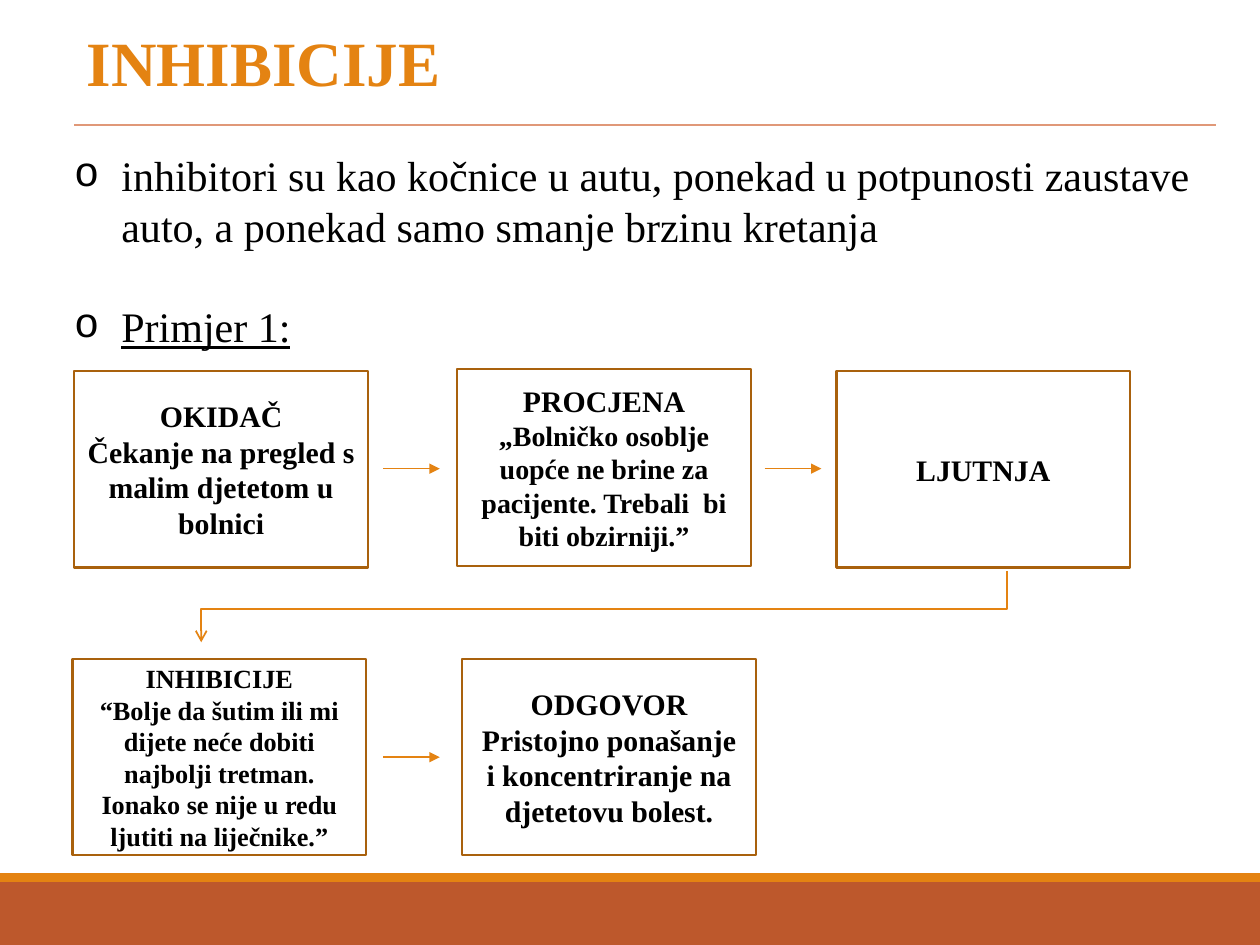
from pptx import Presentation
from pptx.dml.color import RGBColor
from pptx.enum.shapes import MSO_CONNECTOR as Link, MSO_SHAPE as Form
from pptx.enum.text import MSO_ANCHOR as Anchor, PP_ALIGN as Align
from pptx.oxml.ns import qn
from pptx.util import Pt
from lxml.etree import SubElement
from dataclasses import dataclass


@dataclass(frozen=True)
class Theme:
    face: str = "Times New Roman"
    ink: str = "000000"
    gold: str = "E48312"
    rust: str = "BD582C"
    rule: str = "E09878"
    edge: str = "A9610D"
    head: int = 36
    body: int = 24
    step: int = 17


theme = Theme()


def style(par, size, color=theme.ink, bold=False):
    font = par.font
    font.name, font.size, font.bold = theme.face, Pt(size), bold
    font.color.rgb = RGBColor.from_string(color)


def stroke(shape, color, width=1, tip=None):
    """Colour the outline and, if tip is given, end it with an arrowhead."""
    shape.line.color.rgb = RGBColor.from_string(color)
    shape.line.width = Pt(width)
    if tip:
        SubElement(shape.line._get_or_add_ln(), qn("a:tailEnd"), type=tip)


deck = Presentation()
deck.slide_width, deck.slide_height = Pt(720), Pt(540)
slide = deck.slides.add_slide(deck.slide_layouts[5])
shapes = slide.shapes

# Footer bands
for top, high, color in [(504, 36, theme.rust), (499, 5, theme.gold)]:
    band = shapes.add_shape(Form.RECTANGLE, 0, Pt(top), Pt(720), Pt(high))
    band.shadow.inherit = False
    band.fill.solid()
    band.fill.fore_color.rgb = RGBColor.from_string(color)
    band.line.fill.background()

# Title
title = shapes.title
title.left, title.top, title.width, title.height = Pt(42.5), Pt(9.4), Pt(677.5), Pt(51)
title.text_frame.text = "INHIBICIJE"
title.text_frame.vertical_anchor = Anchor.MIDDLE
par = title.text_frame.paragraphs[0]
par.alignment = Align.LEFT
style(par, theme.head, theme.gold, True)

# Bullets
box = shapes.add_textbox(Pt(35.3), Pt(82), Pt(659.5), Pt(174))
frame = box.text_frame
frame.word_wrap = True
points = [
    "inhibitori su kao kočnice u autu, ponekad u potpunosti zaustave auto, "
    "a ponekad samo smanje brzinu kretanja",
    "Primjer 1:",
]
for i, text in enumerate(points):
    par = frame.paragraphs[0] if i == 0 else frame.add_paragraph()
    par.text = text
    props = par._p.get_or_add_pPr()
    props.set("marL", str(Pt(27)))
    props.set("indent", str(-Pt(27)))
    SubElement(props, qn("a:buFont"), typeface="Courier New")
    SubElement(props, qn("a:buChar"), char="o")
    style(par, theme.body)
    if i:
        par.space_before = Pt(28.8)
        par.font.underline = True

# Steps: left, top, heading, text, heading size, text size
steps = [
    (42.5, 212, "OKIDAČ", "Čekanje na pregled s malim djetetom u bolnici",
     theme.step, theme.step),
    (261.3, 211, "PROCJENA",
     "„Bolničko osoblje uopće ne brine za pacijente. Trebali  bi biti obzirniji.”",
     theme.step, 16),
    (478, 212, "LJUTNJA", None, theme.step, theme.step),
    (41.5, 376.5, "INHIBICIJE",
     "“Bolje da šutim ili mi dijete neće dobiti najbolji tretman. "
     "Ionako se nije u redu ljutiti na liječnike.”", 15, 15),
    (264.2, 376.5, "ODGOVOR",
     "Pristojno ponašanje i koncentriranje na djetetovu bolest.",
     theme.step, theme.step),
]
for left, top, name, text, big, small in steps:
    step = shapes.add_shape(Form.RECTANGLE, Pt(left), Pt(top), Pt(167.8), Pt(112.3))
    step.shadow.inherit = False
    step.fill.background()
    stroke(step, theme.edge, 1.25)
    frame = step.text_frame
    frame.word_wrap = True
    frame.vertical_anchor = Anchor.MIDDLE
    frame.text = f"{name}\n{text}" if text else name
    for par, size in zip(frame.paragraphs, (big, small)):
        par.alignment = Align.CENTER
        style(par, size, bold=True)

# Title rule and straight arrows
lines = [
    (42.5, 71.3, 652.3, theme.rule, None),
    (218.9, 267.8, 32.4, theme.gold, "triangle"),
    (437, 267.8, 32.4, theme.gold, "triangle"),
    (218.9, 432.7, 32.4, theme.gold, "triangle"),
]
for left, top, wide, color, tip in lines:
    line = shapes.add_connector(
        Link.STRAIGHT, Pt(left), Pt(top), Pt(left + wide), Pt(top))
    stroke(line, color, tip=tip)
    SubElement(line._element.spPr, qn("a:effectLst"))

# Bent arrow down to the second row
pen = shapes.build_freeform(Pt(575.3), Pt(326.2))
pen.add_line_segments(
    [(Pt(575.3), Pt(348)), (Pt(115), Pt(348)), (Pt(115), Pt(367))], close=False)
bend = pen.convert_to_shape()
bend.shadow.inherit = False
bend.fill.background()
stroke(bend, theme.gold, tip="arrow")

deck.save("out.pptx")
